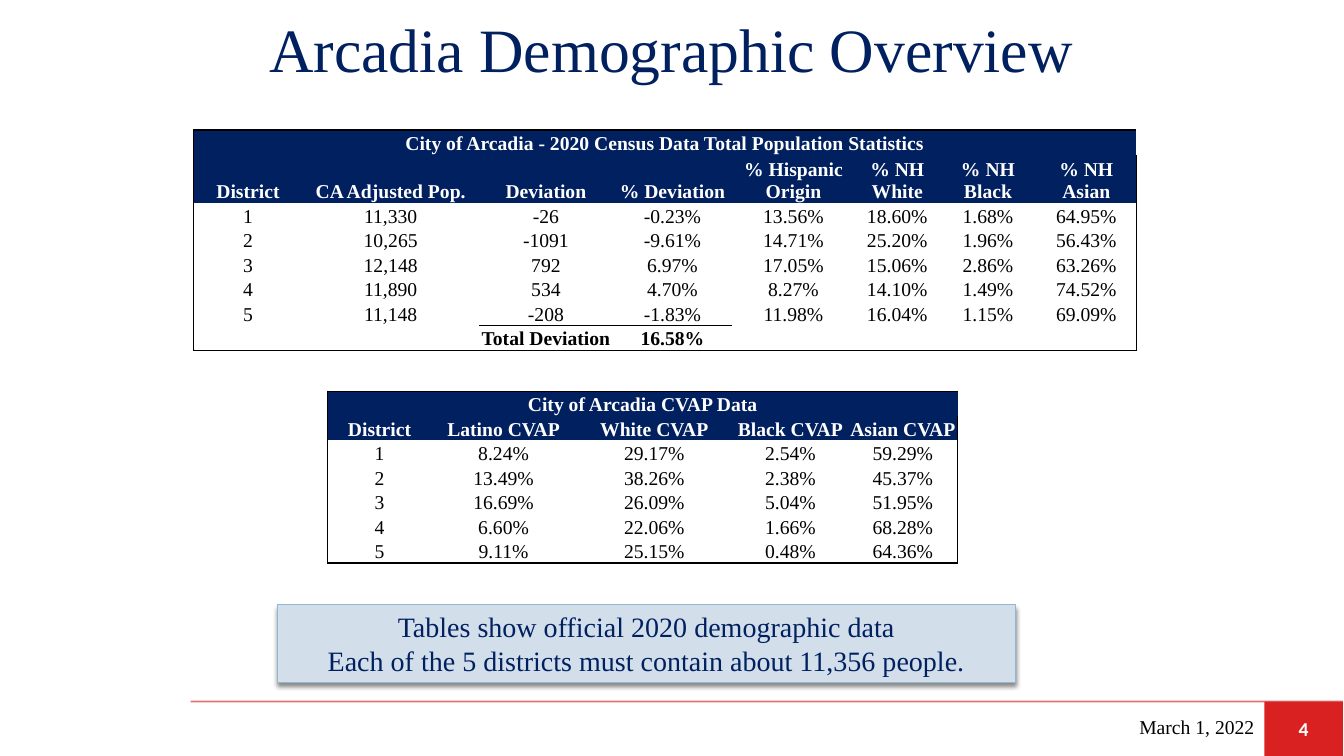
from lxml import etree
from pptx import Presentation, util as u
from pptx.dml.color import RGBColor
from pptx.enum import shapes, text
from pptx.oxml import ns

NAVY = RGBColor(0x00, 0x20, 0x60)
WHITE = RGBColor(0xFF, 0xFF, 0xFF)
BLACK = RGBColor(0x00, 0x00, 0x00)
RED = RGBColor(0xD9, 0x21, 0x21)
DARK_RED = RGBColor(0xC8, 0x00, 0x00)
PALE_BLUE = RGBColor(0xD2, 0xDE, 0xEA)
EDGE_BLUE = RGBColor(0x94, 0xB6, 0xD2)
SERIF = "Times New Roman"
PLAIN_TABLE = "{2D5ABB26-0587-4C30-8999-92F81FD0307C}"

POPULATION = [
    ["City of Arcadia - 2020 Census Data Total Population Statistics"] + [""] * 7,
    ["District", "CA Adjusted Pop.", "Deviation", "% Deviation",
     "% Hispanic Origin", "% NH White", "% NH Black", "% NH Asian"],
    ["1", "11,330", "-26", "-0.23%", "13.56%", "18.60%", "1.68%", "64.95%"],
    ["2", "10,265", "-1091", "-9.61%", "14.71%", "25.20%", "1.96%", "56.43%"],
    ["3", "12,148", "792", "6.97%", "17.05%", "15.06%", "2.86%", "63.26%"],
    ["4", "11,890", "534", "4.70%", "8.27%", "14.10%", "1.49%", "74.52%"],
    ["5", "11,148", "-208", "-1.83%", "11.98%", "16.04%", "1.15%", "69.09%"],
    ["", "", "Total Deviation", "16.58%", "", "", "", ""],
]
CVAP = [
    ["City of Arcadia CVAP Data"] + [""] * 4,
    ["District", "Latino CVAP", "White CVAP", "Black CVAP", "Asian CVAP"],
    ["1", "8.24%", "29.17%", "2.54%", "59.29%"],
    ["2", "13.49%", "38.26%", "2.38%", "45.37%"],
    ["3", "16.69%", "26.09%", "5.04%", "51.95%"],
    ["4", "6.60%", "22.06%", "1.66%", "68.28%"],
    ["5", "9.11%", "25.15%", "0.48%", "64.36%"],
]


def add_xml(parent, tag, **attributes):
    """Append a DrawingML element and return it."""
    return etree.SubElement(parent, ns.qn(tag), attributes)


def write(frame, words, size=14, color=BLACK, bold=False, font=SERIF,
          align=text.PP_ALIGN.CENTER, anchor=text.MSO_ANCHOR.MIDDLE):
    """Fill a text frame, one paragraph per line of words."""
    frame.word_wrap = True
    frame.vertical_anchor = anchor
    for index, line in enumerate(words.split("\n")):
        para = frame.add_paragraph() if index else frame.paragraphs[0]
        para.alignment = align
        if not line:
            add_xml(para._p, "a:endParaRPr", sz=str(size * 100))
            continue
        span = para.add_run()
        span.text = line
        span.font.name = font
        span.font.size = u.Pt(size)
        span.font.bold = bold
        span.font.color.rgb = color


class Page:
    """Holds the slide and draws each kind of element on it."""

    def __init__(self, deck):
        self.shapes = deck.slides.add_slide(deck.slide_layouts[6]).shapes

    def text(self, at, words, **style):
        """Add a text box."""
        box = self.shapes.add_textbox(*map(u.Inches, at))
        write(box.text_frame, words, **style)

    def panel(self, at, words, fill, edge=None, shadow=False, **style):
        """Add a filled rectangle with text."""
        box = self.shapes.add_shape(shapes.MSO_SHAPE.RECTANGLE, *map(u.Inches, at))
        box.shadow.inherit = False
        box.fill.solid()
        box.fill.fore_color.rgb = fill
        if edge is None:
            box.line.fill.background()
        else:
            box.line.color.rgb = edge
            box.line.width = u.Pt(0.79)
        if shadow:
            effects = box._element.spPr.find(ns.qn("a:effectLst"))
            cast = add_xml(effects, "a:outerShdw", blurRad=str(u.Pt(3)), dist=str(u.Pt(2.4)),
                           dir="5400000", rotWithShape="0")
            add_xml(add_xml(cast, "a:srgbClr", val=str(BLACK)), "a:alpha", val="45000")
        write(box.text_frame, words, **style)

    def rule(self, start, end, color, width, opacity):
        """Add a translucent straight line."""
        line = self.shapes.add_connector(shapes.MSO_CONNECTOR.STRAIGHT,
                                         *map(u.Inches, start + end))
        line.line.color.rgb = color
        line.line.width = u.Pt(width)
        properties = line._element.spPr
        tint = next(properties.iter(ns.qn("a:srgbClr")))
        add_xml(tint, "a:alpha", val=str(opacity * 1000))
        add_xml(properties, "a:effectLst")

    def table(self, left, top, widths, rows, header_height, total_columns=()):
        """Add an outlined table with a merged title and a navy header."""
        heights = [0.22, header_height] + [0.22] * (len(rows) - 2)
        frame = self.shapes.add_table(len(rows), len(widths), *map(
            u.Inches, (left, top, sum(widths), sum(heights))))
        next(frame._element.iter(ns.qn("a:tableStyleId"))).text = PLAIN_TABLE
        table = frame.table
        table.first_row = table.horz_banding = False
        for column, width in zip(table.columns, widths):
            column.width = u.Inches(width)
        for row, height in zip(table.rows, heights):
            row.height = u.Inches(height)
        last_row, last_column = len(rows) - 1, len(widths) - 1
        for r, values in enumerate(rows):
            for c, words in enumerate(values):
                totaled = c in total_columns
                borders = {
                    "L": 1 if c == 0 else 0,
                    "R": 1 if c == last_column else 0,
                    "T": 1 if r == 0 else 0.5 if totaled and r == last_row else 0,
                    "B": 1 if r == last_row else 0.5 if totaled and r == last_row - 1 else 0,
                }
                header = r < 2
                self.cell(table.cell(r, c), words, borders, header,
                          header or (totaled and r == last_row))
        table.cell(0, 0).merge(table.cell(0, last_column))

    def cell(self, cell, words, borders, header, bold):
        """Style one table cell."""
        cell.margin_left = cell.margin_right = cell.margin_top = u.Inches(0.01)
        cell.margin_bottom = 0
        cell.vertical_anchor = text.MSO_ANCHOR.BOTTOM
        properties = cell._tc.get_or_add_tcPr()
        for side, width in borders.items():
            if width:
                line = add_xml(properties, "a:ln" + side, w=str(u.Pt(width)))
                add_xml(add_xml(line, "a:solidFill"), "a:srgbClr", val=str(BLACK))
        if header:
            cell.fill.solid()
            cell.fill.fore_color.rgb = NAVY
        else:
            cell.fill.background()
        write(cell.text_frame, words, color=WHITE if header else BLACK, bold=bold,
              anchor=text.MSO_ANCHOR.BOTTOM)


def main():
    """Build and save the deck."""
    deck = Presentation()
    deck.slide_width, deck.slide_height = u.Inches(13.33), u.Inches(7.5)
    page = Page(deck)
    page.rule((1.89, 6.96), (13.32, 6.96), DARK_RED, 1.25, 55)
    page.panel((12.54, 6.96, 0.78, 0.54), "4", RED, color=WHITE, bold=True, font="Calibri")
    page.text((0.01, 0, 13.3, 0.95), "Arcadia Demographic Overview", size=44, color=NAVY)
    page.text((8.65, 7.01, 3.89, 0.4), "March 1, 2022", align=text.PP_ALIGN.RIGHT)
    page.table(1.92, 1.29, [1.08, 1.75, 1.33, 1.18, 1.22, 0.84, 0.96, 0.99],
               POPULATION, 0.44, total_columns=(2, 3))
    page.table(3.25, 3.88, [1.03, 1.43, 1.56, 1.14, 1.09], CVAP, 0.22)
    page.panel((2.75, 6, 7.32, 0.77), "Tables show official 2020 demographic data\n"
               "Each of the 5 districts must contain about 11,356 people.",
               PALE_BLUE, edge=EDGE_BLUE, shadow=True, size=20, color=NAVY,
               anchor=text.MSO_ANCHOR.TOP)
    deck.save("out.pptx")


if __name__ == "__main__":
    main()
